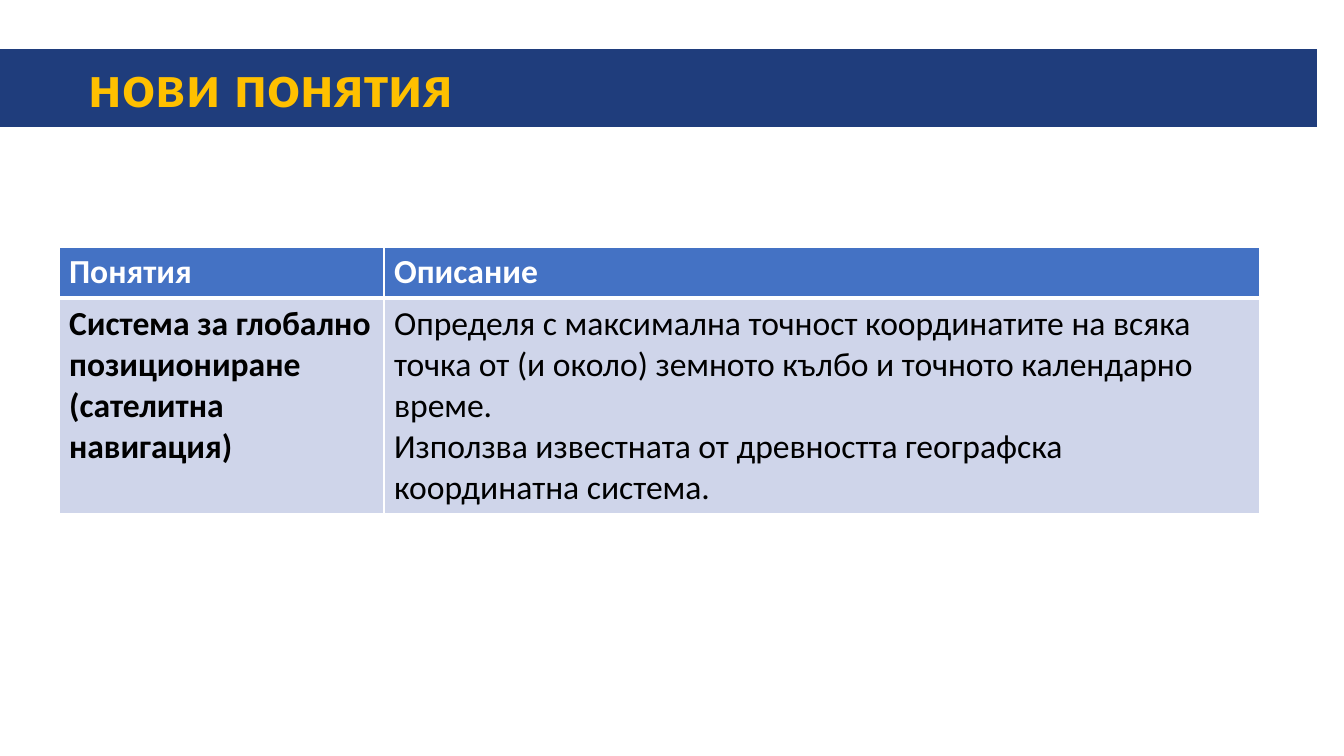
from lxml import etree
from pptx import Presentation
from pptx.dml.color import RGBColor
from pptx.enum.shapes import MSO_SHAPE
from pptx.enum.text import MSO_ANCHOR, PP_ALIGN
from pptx.util import Pt

RECT = MSO_SHAPE.RECTANGLE
MIDDLE = MSO_ANCHOR.MIDDLE
LEFT = PP_ALIGN.LEFT
NS = "http://schemas.openxmlformats.org/drawingml/2006/main"
PX = 914400 / 100.8

THEME = {
    "font": "Calibri", "title": 44, "body": 24,
    "navy": "1F3D7C", "gold": "FFC000", "blue": "4472C4",
    "pale": "CFD5EA", "white": "FFFFFF", "black": "000000",
}


def px(*sizes):
    return [round(size * PX) for size in sizes]


def style(para, size, color, bold):
    para.alignment = LEFT
    para.font.name = THEME["font"]
    para.font.size = Pt(THEME[size])
    para.font.bold = bold
    para.font.color.rgb = RGBColor.from_string(THEME[color])


deck = Presentation()
deck.slide_width, deck.slide_height = px(1344, 756)
slide = deck.slides.add_slide(deck.slide_layouts[6])

bar = slide.shapes.add_shape(RECT, *px(0, 49, 1317, 78))
bar.shadow.inherit = False
bar.fill.solid()
bar.fill.fore_color.rgb = RGBColor.from_string(THEME["navy"])
bar.line.fill.background()
frame = bar.text_frame
frame.word_wrap = True
frame.vertical_anchor = MIDDLE
frame.margin_left, = px(89)
frame.text = "нови понятия"
title = frame.paragraphs[0]
title.line_spacing = 0.9
style(title, "title", "gold", True)

rows = [
    ["Понятия", "Описание"],
    [
        "Система за глобално\nпозициониране (сателитна навигация)",
        "Определя с максимална точност координатите на всяка точка от "
        "(и около) земното кълбо и точното календарно време.\n"
        "Използва известната от древността географска координатна система.",
    ],
]
table = slide.shapes.add_table(2, 2, *px(59, 247, 1201, 265)).table
for col, width in zip(table.columns, px(325, 876)):
    col.width = width
for row, height in zip(table.rows, px(50, 215)):
    row.height = height

for r, texts in enumerate(rows):
    head = r == 0
    edges = {"lnL": 1, "lnR": 1, "lnT": 1 if head else 3, "lnB": 3 if head else 1}
    for c, text in enumerate(texts):
        cell = table.cell(r, c)
        props = cell._tc.get_or_add_tcPr()
        for edge, width in edges.items():
            line = etree.SubElement(props, f"{{{NS}}}{edge}", w=str(Pt(width)))
            fill = etree.SubElement(line, f"{{{NS}}}solidFill")
            etree.SubElement(fill, f"{{{NS}}}srgbClr", val=THEME["white"])
        cell.fill.solid()
        cell.fill.fore_color.rgb = RGBColor.from_string(THEME["blue" if head else "pale"])
        cell.text = text
        for para in cell.text_frame.paragraphs:
            style(para, "body", "white" if head else "black", head or c == 0)

deck.save("out.pptx")
